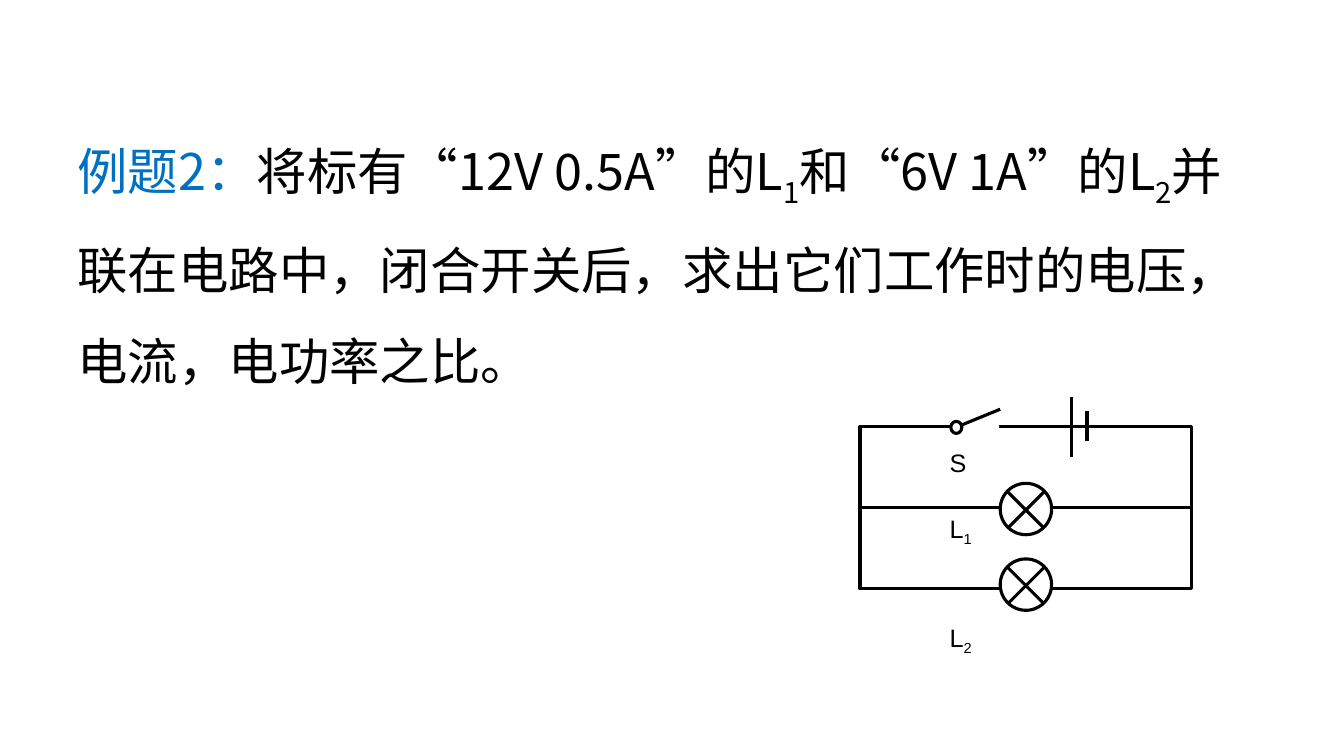
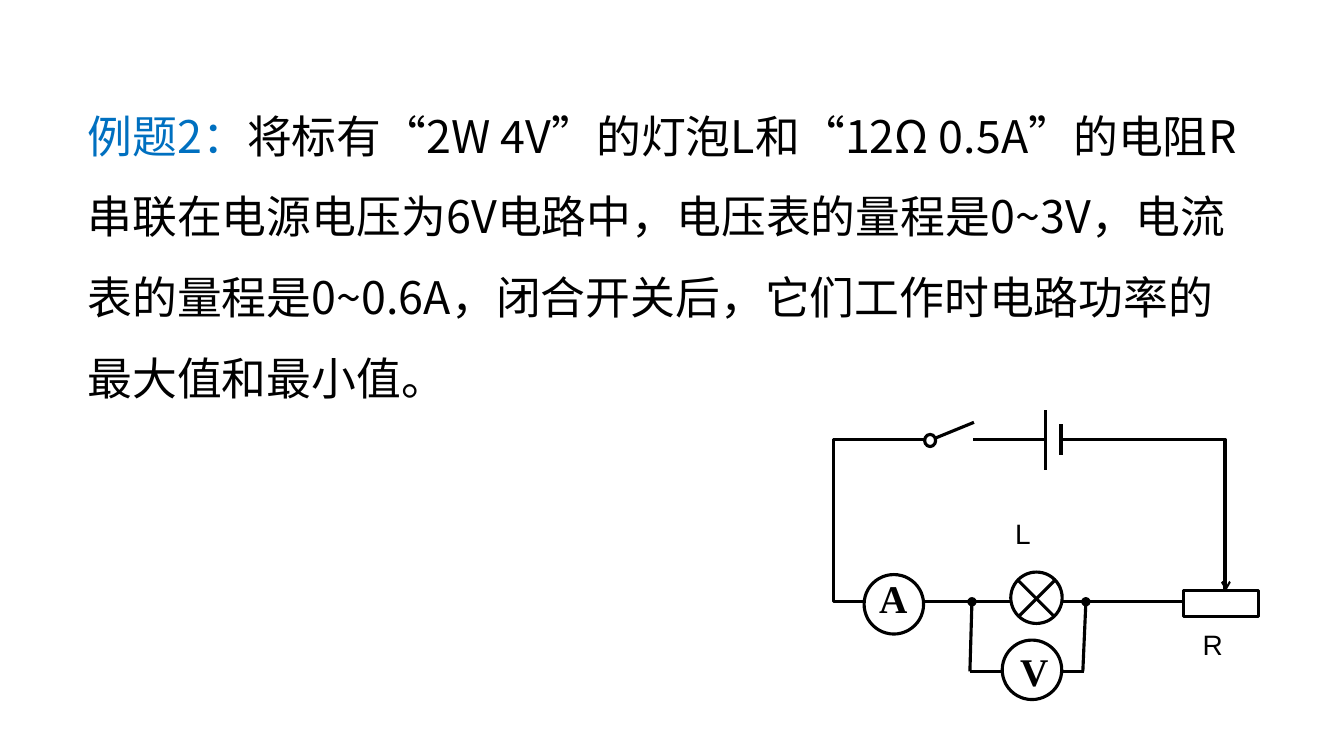
from dataclasses import dataclass

from lxml import etree
from pptx import Presentation
from pptx.dml.color import RGBColor
from pptx.enum.lang import MSO_LANGUAGE_ID
from pptx.enum.shapes import MSO_CONNECTOR, MSO_SHAPE
from pptx.oxml.ns import qn
from pptx.util import Inches, Pt

STRAIGHT = MSO_CONNECTOR.STRAIGHT
RECTANGLE = MSO_SHAPE.RECTANGLE
OVAL = MSO_SHAPE.OVAL
CHINESE = MSO_LANGUAGE_ID.SIMPLIFIED_CHINESE


@dataclass(frozen=True)
class Theme:
    ink: RGBColor = RGBColor(0x00, 0x00, 0x00)
    paper: RGBColor = RGBColor(0xFF, 0xFF, 0xFF)
    accent: RGBColor = RGBColor(0x00, 0x70, 0xC0)
    body_font: str = "Noto Sans CJK SC"
    label_font: str = "Arial"
    meter_font: str = "Times New Roman"
    parallel_body_size: float = 36
    series_body_size: float = 32
    parallel_label_size: float = 18
    series_label_size: float = 20
    meter_size: float = 28
    wire: float = 2.25
    thick_wire: float = 3
    thin_wire: float = 1.5
    spacing: float = 1.5
    subscript: str = "-25000"


THEME = Theme()


def add_text(slide, box, runs, size, font, bold=False, spacing=1.0):
    frame = slide.shapes.add_textbox(*map(Inches, box)).text_frame
    frame.word_wrap = True
    paragraph = frame.paragraphs[0]
    paragraph.line_spacing = spacing
    style = {"size": Pt(size), "bold": bold, "name": font, "language_id": CHINESE}
    for text, color, lowered in runs:
        run = paragraph.add_run()
        run.text = text
        run.font.color.rgb = color
        for key, value in style.items():
            setattr(run.font, key, value)
        properties = run._r.get_or_add_rPr()
        etree.SubElement(properties, qn("a:ea")).set("typeface", font)
        if lowered:
            properties.set("baseline", THEME.subscript)


def add_problem(slide, box, size, heading, passages):
    runs = [(heading, THEME.accent, False)]
    runs += [(text, THEME.ink, index % 2 == 1) for index, text in enumerate(passages)]
    add_text(slide, box, runs, size, THEME.body_font, spacing=THEME.spacing)


@dataclass
class Circuit:
    slide: object
    left: float
    top: float
    width: float
    height: float
    label_size: float

    def wire(self, x1, y1, x2, y2, weight=THEME.wire, tail=None):
        ends = (self.left + x1, self.top + y1, self.left + x2, self.top + y2)
        line = self.slide.shapes.add_connector(STRAIGHT, *map(Inches, ends))
        line.line.color.rgb = THEME.ink
        line.line.width = Pt(weight)
        if tail:
            outline = line.line._get_or_add_ln()
            etree.SubElement(outline, qn("a:tailEnd")).set("type", tail)
        etree.SubElement(line._element.spPr, qn("a:effectLst"))

    def symbol(self, kind, x, y, width, height, filled=True, outlined=True):
        box = (self.left + x, self.top + y, width, height)
        shape = self.slide.shapes.add_shape(kind, *map(Inches, box))
        shape.shadow.inherit = False
        if filled:
            shape.fill.solid()
            shape.fill.fore_color.rgb = THEME.paper
        else:
            shape.fill.background()
        if outlined:
            shape.line.color.rgb = THEME.ink
            shape.line.width = Pt(THEME.wire)
        else:
            shape.line.fill.background()

    def label(self, x, y, text, subscript=""):
        runs = [(text, THEME.ink, False)]
        if subscript:
            runs.append((subscript, THEME.ink, True))
        box = (self.left + x, self.top + y, 0.6, 0.4)
        add_text(self.slide, box, runs, self.label_size, THEME.label_font)

    def loop(self):
        self.symbol(RECTANGLE, 0, 0, self.width, self.height, filled=False)

    def switch(self, x=0.95):
        self.symbol(RECTANGLE, x, -0.17, 0.43, 0.3, outlined=False)
        self.wire(x, 0.01, x + 0.44, -0.17)
        self.symbol(OVAL, x - 0.05, -0.05, 0.11, 0.12)

    def battery(self, x=2.1, gap=False):
        if gap:
            self.symbol(RECTANGLE, x, -0.1, 0.15, 0.15, outlined=False)
        self.wire(x, -0.29, x, 0.3)
        self.wire(x + 0.15, -0.15, x + 0.15, 0.15, THEME.thick_wire)

    def lamp(self, x, y, diameter=0.51, reach=0.18):
        self.symbol(OVAL, x - diameter / 2, y - diameter / 2, diameter, diameter)
        self.wire(x - reach, y - reach + 0.01, x + reach, y + reach + 0.01)
        self.wire(x - reach, y + reach + 0.01, x + reach, y - reach + 0.01)

    def meter(self, x, y, letter, dx, dy, diameter=0.59):
        self.symbol(OVAL, x, y, diameter, diameter)
        box = (self.left + x + dx, self.top + y + dy, 0.54, 0.57)
        add_text(self.slide, box, [(letter, THEME.ink, False)],
                 THEME.meter_size, THEME.meter_font, bold=True)


def draw_parallel_circuit(slide, left, top, width, height):
    circuit = Circuit(slide, left, top, width, height, THEME.parallel_label_size)
    circuit.wire(0, height / 2, width, height / 2)
    circuit.loop()
    circuit.battery()
    circuit.switch()
    for lamp_y in (0.82, 1.57):
        circuit.lamp(width / 2, lamp_y)
    labels = (("S", "", 0.16), ("L", "1", 0.81), ("L", "2", 1.89))
    for text, subscript, y in labels:
        circuit.label(0.79, y, text, subscript)


def draw_series_circuit(slide, left, top, width, height):
    circuit = Circuit(slide, left, top, width, height, THEME.series_label_size)
    branch_y = 2.3
    circuit.wire(1.35, branch_y, 2.48, branch_y)
    for foot_x, node_x in ((1.35, 1.37), (2.47, 2.5)):
        circuit.wire(foot_x, branch_y, node_x, height, tail="oval")
    circuit.meter(1.67, 1.99, "V", 0.08, 0.02)
    circuit.loop()
    circuit.battery(gap=True)
    circuit.switch()
    circuit.meter(0.3, 1.34, "A", 0.05, -0.05)
    circuit.symbol(RECTANGLE, 3.47, 1.5, 0.74, 0.26)
    circuit.wire(width, 0.81, width + 0.01, 1.5, THEME.thin_wire, "arrow")
    circuit.lamp(2.01, 1.57)
    circuit.label(1.7, 0.71, "L")
    circuit.label(3.56, 1.82, "R")


def build_parallel_slide(slide):
    add_problem(slide, (0.67, 1, 11.63, 2.83), THEME.parallel_body_size, "例题2：", (
        "将标有“12V 0.5A”的L", "1", "和“6V 1A”的L", "2",
        "并联在电路中，闭合开关后，求出它们工作时的电压，电流，电功率之比。"))
    draw_parallel_circuit(slide, 8.53, 4.23, 3.29, 1.61)


def build_series_slide(slide):
    draw_series_circuit(slide, 8.27, 4.36, 3.88, 1.61)
    add_problem(slide, (0.77, 0.76, 11.63, 3.33), THEME.series_body_size, "例题2：", (
        "将标有“2W 4V”的灯泡L和“12Ω 0.5A”的电阻R串联在电源电压为6V电路中，"
        "电压表的量程是0~3V，电流表的量程是0~0.6A，闭合开关后，"
        "它们工作时电路功率的最大值和最小值。",))


def main():
    deck = Presentation()
    deck.slide_width = Inches(13.33)
    deck.slide_height = Inches(7.5)
    blank = deck.slide_layouts[6]
    for build in (build_parallel_slide, build_series_slide):
        build(deck.slides.add_slide(blank))
    deck.save("out.pptx")


if __name__ == "__main__":
    main()
